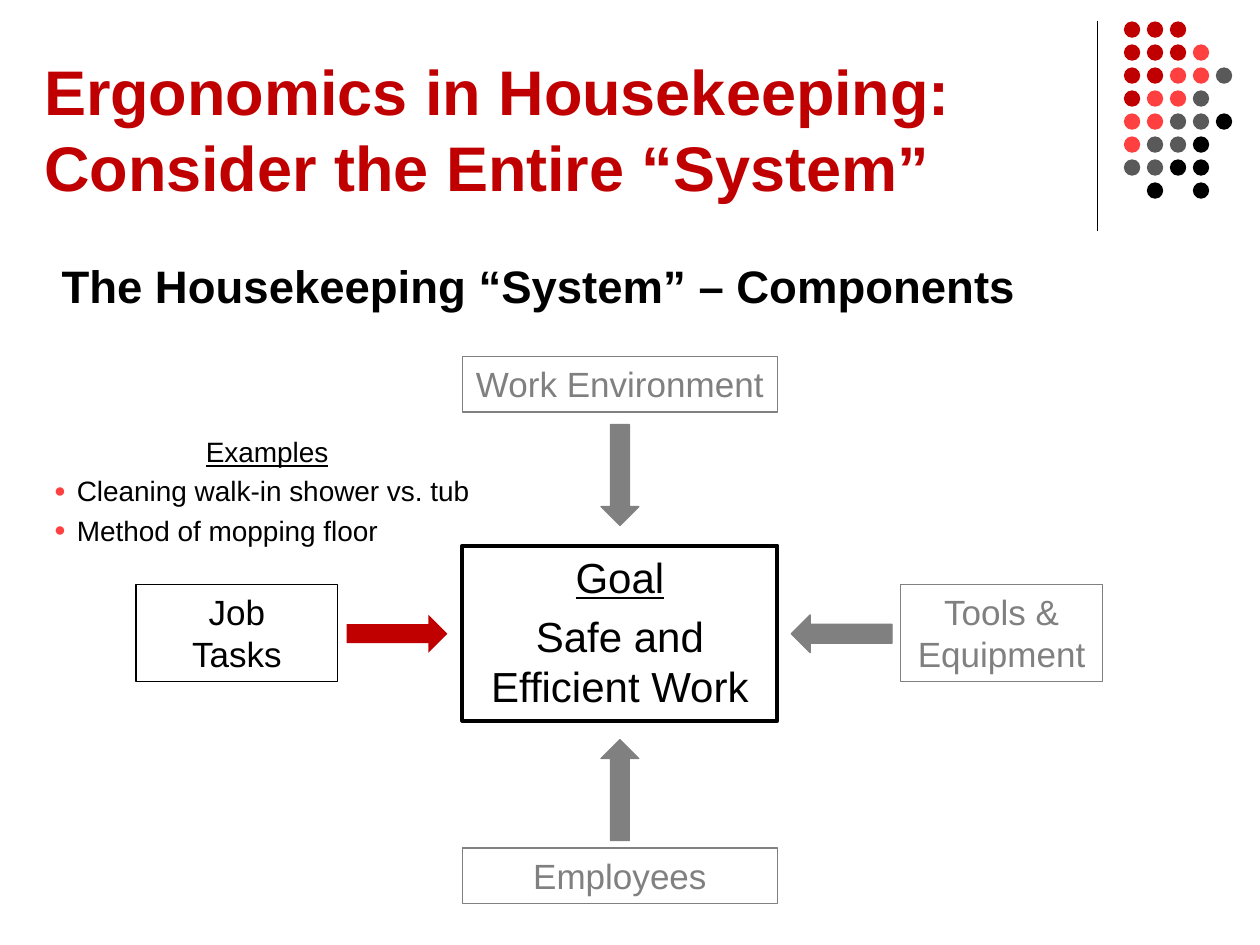
from dataclasses import dataclass

from lxml.etree import SubElement
from pptx import Presentation
from pptx.dml.color import RGBColor
from pptx.enum.shapes import MSO_CONNECTOR, MSO_SHAPE
from pptx.enum.text import MSO_ANCHOR, MSO_AUTO_SIZE, PP_ALIGN
from pptx.oxml.ns import qn
from pptx.util import Inches, Pt


@dataclass(frozen=True)
class Theme:
    font: str = "Arial"
    red: RGBColor = RGBColor(0xC0, 0x00, 0x00)
    coral: RGBColor = RGBColor(0xFF, 0x40, 0x40)
    charcoal: RGBColor = RGBColor(0x59, 0x59, 0x59)
    gray: RGBColor = RGBColor(0x80, 0x80, 0x80)
    black: RGBColor = RGBColor(0x00, 0x00, 0x00)
    title_size: int = 36
    heading_size: int = 26
    goal_size: int = 24
    box_size: int = 20
    list_size: int = 16


THEME = Theme()

# One letter per dot: red, coral, charcoal (g), black
DOT_ROWS = ["rrr", "rrrc", "rrccg", "rccg", "ccggb", "cggb", "ggbb", " b b"]
DOT_COLORS = {"r": THEME.red, "c": THEME.coral, "g": THEME.charcoal, "b": THEME.black}
DOT_SIZE = 0.13
DOT_PITCH = 0.73 / 4

# Text, left, top, width, height, colour
COMPONENTS = [
    ("Work Environment", 3.67, 2.83, 2.5, 0.44, THEME.gray),
    ("Tools & Equipment", 7.15, 4.64, 1.6, 0.77, THEME.gray),
    ("Employees", 3.67, 6.73, 2.5, 0.44, THEME.gray),
    ("Job\vTasks", 1.08, 4.64, 1.6, 0.77, THEME.black),
]

# Left, top, rotation, colour
ARROWS = [
    (4.77, 3.37, 180, THEME.gray),
    (6.53, 4.63, 270, THEME.gray),
    (4.77, 5.87, 0, THEME.gray),
    (3.0, 4.63, 90, THEME.red),
]


def place(shape, left, top, width, height):
    shape.left, shape.top = Inches(left), Inches(top)
    shape.width, shape.height = Inches(width), Inches(height)


def write(shape, lines, size, color, align=PP_ALIGN.LEFT, bold=False, anchor=MSO_ANCHOR.TOP):
    """Fill a shape with one paragraph per line, a fifth of a line apart."""
    frame = shape.text_frame
    frame.word_wrap = True
    frame.auto_size = MSO_AUTO_SIZE.NONE
    frame.vertical_anchor = anchor
    frame.text = "\n".join(lines)
    for index, paragraph in enumerate(frame.paragraphs):
        paragraph.alignment = align
        paragraph.space_before = Pt(size * 0.2 if index else 0)
        font = paragraph.font
        font.name, font.size, font.bold = THEME.font, Pt(size), bold
        font.color.rgb = color
    return frame.paragraphs


def set_bullet(paragraph, indent=0.0, color=None):
    """Give the paragraph a small round bullet, or none without a colour."""
    properties = paragraph._p.get_or_add_pPr()
    properties.set("marL", str(Inches(indent)))
    properties.set("indent", str(-Inches(indent)))
    bullet = []
    if color is None:
        bullet.append(SubElement(properties, qn("a:buNone")))
    else:
        bullet_color = SubElement(properties, qn("a:buClr"))
        SubElement(bullet_color, qn("a:srgbClr"), val=str(color))
        bullet.append(bullet_color)
        bullet.append(SubElement(properties, qn("a:buSzPct"), val="70000"))
        bullet.append(SubElement(properties, qn("a:buFont"), typeface=THEME.font))
        bullet.append(SubElement(properties, qn("a:buChar"), char="●"))
    # Bullet settings must come before the default run properties
    default_run = properties.find(qn("a:defRPr"))
    for element in bullet:
        default_run.addprevious(element)


def add_box(slide, lines, left, top, width, height, color, size, line_width=0.75):
    box = slide.shapes.add_shape(MSO_SHAPE.RECTANGLE, 0, 0, 0, 0)
    place(box, left, top, width, height)
    box.shadow.inherit = False
    box.fill.background()
    box.line.color.rgb = color
    box.line.width = Pt(line_width)
    return write(box, lines, size, color, PP_ALIGN.CENTER)


def add_arrow(slide, left, top, rotation, color):
    arrow = slide.shapes.add_shape(MSO_SHAPE.UP_ARROW, 0, 0, 0, 0)
    place(arrow, left, top, 0.3, 0.8)
    arrow.rotation = rotation
    arrow.shadow.inherit = False
    arrow.fill.solid()
    arrow.fill.fore_color.rgb = color
    if color == THEME.gray:
        arrow.line.color.rgb = color
        arrow.line.width = Pt(0.75)
    else:
        arrow.line.fill.background()


def add_divider(slide):
    divider = slide.shapes.add_connector(
        MSO_CONNECTOR.STRAIGHT, Inches(8.71), Inches(0.17), Inches(8.71), Inches(1.83))
    divider.line.color.rgb = THEME.black
    divider.line.width = Pt(0.75)
    SubElement(divider._element.spPr, qn("a:effectLst"))


def add_dots(slide):
    group = slide.shapes.add_group_shape()
    for row, letters in enumerate(DOT_ROWS):
        for column, letter in enumerate(letters):
            if letter == " ":
                continue
            dot = group.shapes.add_shape(
                MSO_SHAPE.OVAL,
                Inches(8.92 + column * DOT_PITCH), Inches(0.17 + row * DOT_PITCH),
                Inches(DOT_SIZE), Inches(DOT_SIZE))
            dot.shadow.inherit = False
            dot.fill.solid()
            dot.fill.fore_color.rgb = DOT_COLORS[letter]
            dot.line.fill.background()


def add_headings(slide):
    title = slide.shapes.title
    place(title, 0.25, 0.25, 8.42, 1.42)
    write(title, ["Ergonomics in Housekeeping: Consider the Entire “System”"],
          THEME.title_size, THEME.red, bold=True, anchor=MSO_ANCHOR.BOTTOM)

    heading = slide.shapes.add_textbox(0, 0, 0, 0)
    place(heading, 0.39, 2, 9.44, 0.54)
    write(heading, ["The Housekeeping “System” – Components"],
          THEME.heading_size, THEME.black, bold=True)


def add_examples(slide):
    body = slide.placeholders[1]
    place(body, 0.33, 3.4, 3.58, 1.02)
    heading, *items = write(
        body, ["Examples", "Cleaning walk-in shower vs. tub", "Method of mopping floor"],
        THEME.list_size, THEME.black)
    heading.alignment = PP_ALIGN.CENTER
    heading.font.underline = True
    set_bullet(heading)
    for item in items:
        set_bullet(item, 0.18, THEME.coral)


def main():
    presentation = Presentation()
    presentation.slide_width, presentation.slide_height = Inches(10), Inches(7.5)
    slide = presentation.slides.add_slide(presentation.slide_layouts[1])

    # Corner decoration
    add_divider(slide)
    add_dots(slide)

    # Title and subheading
    add_headings(slide)

    # Goal with the components around it
    goal, _ = add_box(slide, ["Goal", "Safe and Efficient Work"], 3.67, 4.33, 2.5, 1.39,
                      THEME.black, THEME.goal_size, line_width=2.25)
    goal.font.underline = True
    for text, left, top, width, height, color in COMPONENTS:
        add_box(slide, [text], left, top, width, height, color, THEME.box_size)
    for arrow in ARROWS:
        add_arrow(slide, *arrow)

    # Examples for the highlighted component
    add_examples(slide)

    presentation.save("out.pptx")


if __name__ == "__main__":
    main()
